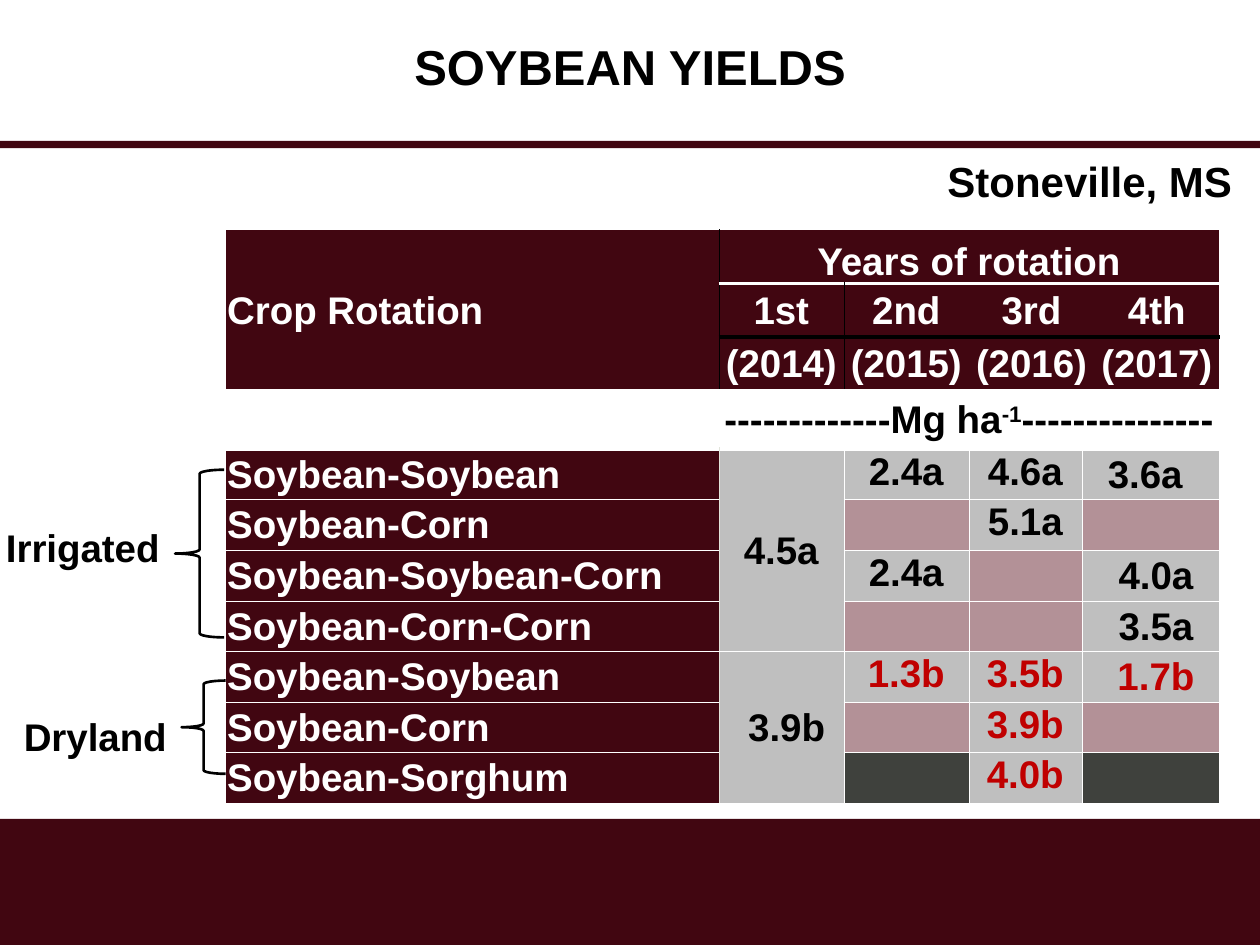
from lxml import etree
from pptx import Presentation
from pptx.dml.color import RGBColor
from pptx.enum.shapes import MSO_SHAPE
from pptx.enum.text import MSO_ANCHOR, MSO_AUTO_SIZE, PP_ALIGN
from pptx.oxml.ns import qn
from pptx.util import Cm, Pt

RECTANGLE, BRACE = MSO_SHAPE.RECTANGLE, MSO_SHAPE.LEFT_BRACE
LEFT, CENTER = PP_ALIGN.LEFT, PP_ALIGN.CENTER
TOP, MIDDLE, BOTTOM = MSO_ANCHOR.TOP, MSO_ANCHOR.MIDDLE, MSO_ANCHOR.BOTTOM
FIT_SHAPE, NO_FIT = MSO_AUTO_SIZE.SHAPE_TO_FIT_TEXT, MSO_AUTO_SIZE.NONE

MAROON, ROSE, GREY, CHARCOAL = "410611", "B39197", "BFBFBF", "3F413D"
BLACK, WHITE, RED, PALE = "000000", "FFFFFF", "C00000", "E2E4DB"
FONT = "Arial"
PLAIN_TABLE_STYLE = "{2D5ABB26-0587-4C30-8999-92F81FD0307C}"

COLUMN_WIDTHS = [9.94, 2.52, 2.52, 2.28, 0.25, 2.52]
ROW_HEIGHTS = [1.08] * 3 + [1.18] + [1.02] * 7
UNIT_ROW, FIRST_BODY_ROW, DRYLAND_ROW, LAST_ROW = 3, 4, 8, 10

# Column, number of columns covered, ordinal and year
YEARS = [(1, 1, "1st", "(2014)"), (2, 1, "2nd", "(2015)"),
         (3, 2, "3rd", "(2016)"), (5, 1, "4th", "(2017)")]

# Rotation, then yields of the 2nd, 3rd and 4th year
YIELDS = [
    ("Soybean-Soybean", "2.4a", "4.6a", "3.6a "),
    ("Soybean-Corn", "", "5.1a", ""),
    ("Soybean-Soybean-Corn", "2.4a", "", " 4.0a"),
    ("Soybean-Corn-Corn", "", "", " 3.5a"),
    ("Soybean-Soybean", "1.3b", "3.5b", " 1.7b"),
    ("Soybean-Corn", "", "3.9b", ""),
    ("Soybean-Sorghum", "", "4.0b", ""),
]


def colour(code):
    return RGBColor.from_string(code)


def add_span(para, text, size, code, baseline=None):
    span = para.add_run()
    span.text = text
    formats = {"name": FONT, "size": Pt(size), "bold": True}
    for name, value in formats.items():
        setattr(span.font, name, value)
    span.font.color.rgb = colour(code)
    if baseline:
        span._r.get_or_add_rPr().set("baseline", str(baseline))


def add_band(page, top, height):
    band = page.shapes.add_shape(RECTANGLE, 0, Cm(top), Cm(25.4), Cm(height))
    band.shadow.inherit = False
    band.fill.solid()
    band.fill.fore_color.rgb = colour(MAROON)
    band.line.fill.background()


def add_label(page, text, left, top, width, height, size=22, wrap=True):
    box = page.shapes.add_textbox(Cm(left), Cm(top), Cm(width), Cm(height))
    frame = box.text_frame
    frame.word_wrap = wrap
    frame.auto_size = FIT_SHAPE
    add_span(frame.paragraphs[0], text, size, BLACK)


def add_brace(page, left, top, width, height):
    brace = page.shapes.add_shape(BRACE, Cm(left), Cm(top), Cm(width), Cm(height))
    brace.shadow.inherit = False
    brace.fill.background()
    brace.line.color.rgb = colour(BLACK)
    brace.line.width = Pt(1.5)


def set_title(page, text):
    title = page.shapes.title
    places = {"left": 0, "top": 0, "width": Cm(25.4), "height": Cm(2.82)}
    for name, value in places.items():
        setattr(title, name, value)
    frame = title.text_frame
    frame.auto_size = NO_FIT
    frame.vertical_anchor = MIDDLE
    para = frame.paragraphs[0]
    para.alignment = CENTER
    para.line_spacing = 0.9
    add_span(para, text, 28, BLACK)


def cell_borders(row, column, rows, columns):
    """Colour and width of each side, found from the place in the table."""
    below, right = row + rows, column + columns
    header, body = below <= UNIT_ROW, row >= FIRST_BODY_ROW
    borders = {}

    def horizontal(level):
        if level == 2:
            return BLACK, 2.25
        if level in (0, LAST_ROW + 1):
            return WHITE, 0.75
        return WHITE, 2.25 if level <= FIRST_BODY_ROW else 0.25

    def vertical(level):
        if level in (0, len(COLUMN_WIDTHS)):
            return WHITE, 0.75
        if level == 1 and row != UNIT_ROW:
            return (BLACK if header else PALE), 0.25
        return (WHITE, 0.25) if body else None

    for side, value in (("lnL", vertical(column)), ("lnR", vertical(right)),
                        ("lnT", horizontal(row)), ("lnB", horizontal(below))):
        if value:
            borders[side] = value
    return borders


def set_cell(table, row, column, spans=(), fill=None, code=WHITE,
             align=CENTER, anchor=MIDDLE, rows=1, columns=1):
    cell = table.cell(row, column)
    if rows * columns > 1:
        cell.merge(table.cell(row + rows - 1, column + columns - 1))
    formats = {"margin_left": Cm(0.03), "margin_right": Cm(0.03),
               "margin_top": Cm(0.03), "margin_bottom": 0,
               "vertical_anchor": anchor}
    for name, value in formats.items():
        setattr(cell, name, value)
    # Borders come before the fill in the cell properties
    properties = cell._tc.get_or_add_tcPr()
    for side, (line_code, width) in cell_borders(row, column, rows, columns).items():
        line = etree.SubElement(properties, qn("a:" + side), w=str(Pt(width)))
        solid = etree.SubElement(line, qn("a:solidFill"))
        etree.SubElement(solid, qn("a:srgbClr"), val=line_code)
    if fill:
        cell.fill.solid()
        cell.fill.fore_color.rgb = colour(fill)
    else:
        cell.fill.background()
    para = cell.text_frame.paragraphs[0]
    para.alignment = align
    for text, baseline in spans:
        add_span(para, text, 22, code, baseline)


def fill_header(table):
    set_cell(table, 0, 0, [("Crop Rotation", None)], MAROON, align=LEFT, rows=3)
    set_cell(table, 0, 1, [("Years of rotation", None)], MAROON,
             anchor=BOTTOM, columns=5)
    for column, columns, *texts in YEARS:
        for row, text in enumerate(texts, 1):
            set_cell(table, row, column, [(text, None)], MAROON, columns=columns)
    # Unit row
    set_cell(table, UNIT_ROW, 0)
    unit = [("-------------Mg ha", None), ("-1", 30000), ("---------------", None)]
    set_cell(table, UNIT_ROW, 1, unit, code=BLACK, columns=5)


def fill_body(table):
    for row, (rotation, *values) in enumerate(YIELDS, FIRST_BODY_ROW):
        set_cell(table, row, 0, [(rotation, None)], MAROON, align=LEFT)
        code = RED if row >= DRYLAND_ROW else BLACK
        gap = CHARCOAL if row == LAST_ROW else ROSE
        for column, text in enumerate(values, 2):
            last = column == 4
            set_cell(table, row, column, [(text, None)] if text else [],
                     GREY if text else gap, code,
                     anchor=MIDDLE if last else TOP, columns=2 if last else 1)
    # First-year yields, one for each water regime
    for row, rows, text in ((FIRST_BODY_ROW, 4, "4.5a"), (DRYLAND_ROW, 3, " 3.9b")):
        set_cell(table, row, 1, [(text, None)], GREY, BLACK, rows=rows)


def add_yield_table(page):
    frame = page.shapes.add_table(
        len(ROW_HEIGHTS), len(COLUMN_WIDTHS), Cm(4.55), Cm(4.63),
        Cm(sum(COLUMN_WIDTHS)), Cm(sum(ROW_HEIGHTS)))
    table = frame.table
    table.first_row = table.horz_banding = False
    table._tbl.tblPr.find(qn("a:tableStyleId")).text = PLAIN_TABLE_STYLE
    for column, width in zip(table.columns, COLUMN_WIDTHS):
        column.width = Cm(width)
    for row, height in zip(table.rows, ROW_HEIGHTS):
        row.height = Cm(height)
    fill_header(table)
    fill_body(table)


def main():
    deck = Presentation()
    deck.slide_width, deck.slide_height = Cm(25.4), Cm(19.05)
    page = deck.slides.add_slide(deck.slide_layouts[5])
    # Footer band, title and rule
    add_band(page, 16.51, 2.54)
    set_title(page, "SOYBEAN YIELDS")
    add_band(page, 2.84, 0.15)
    # Yields and site
    add_yield_table(page)
    add_label(page, "Stoneville, MS", 18.85, 3.02, 6.3, 1.28, size=24, wrap=False)
    # Water regimes
    add_brace(page, 3.53, 9.47, 0.99, 3.38)
    add_label(page, "Irrigated", -0.13, 10.44, 3.78, 1.19)
    add_brace(page, 3.66, 13.72, 0.89, 1.88)
    add_label(page, "Dryland", 0.23, 14.25, 3.43, 1.19)
    deck.save("out.pptx")


if __name__ == "__main__":
    main()
